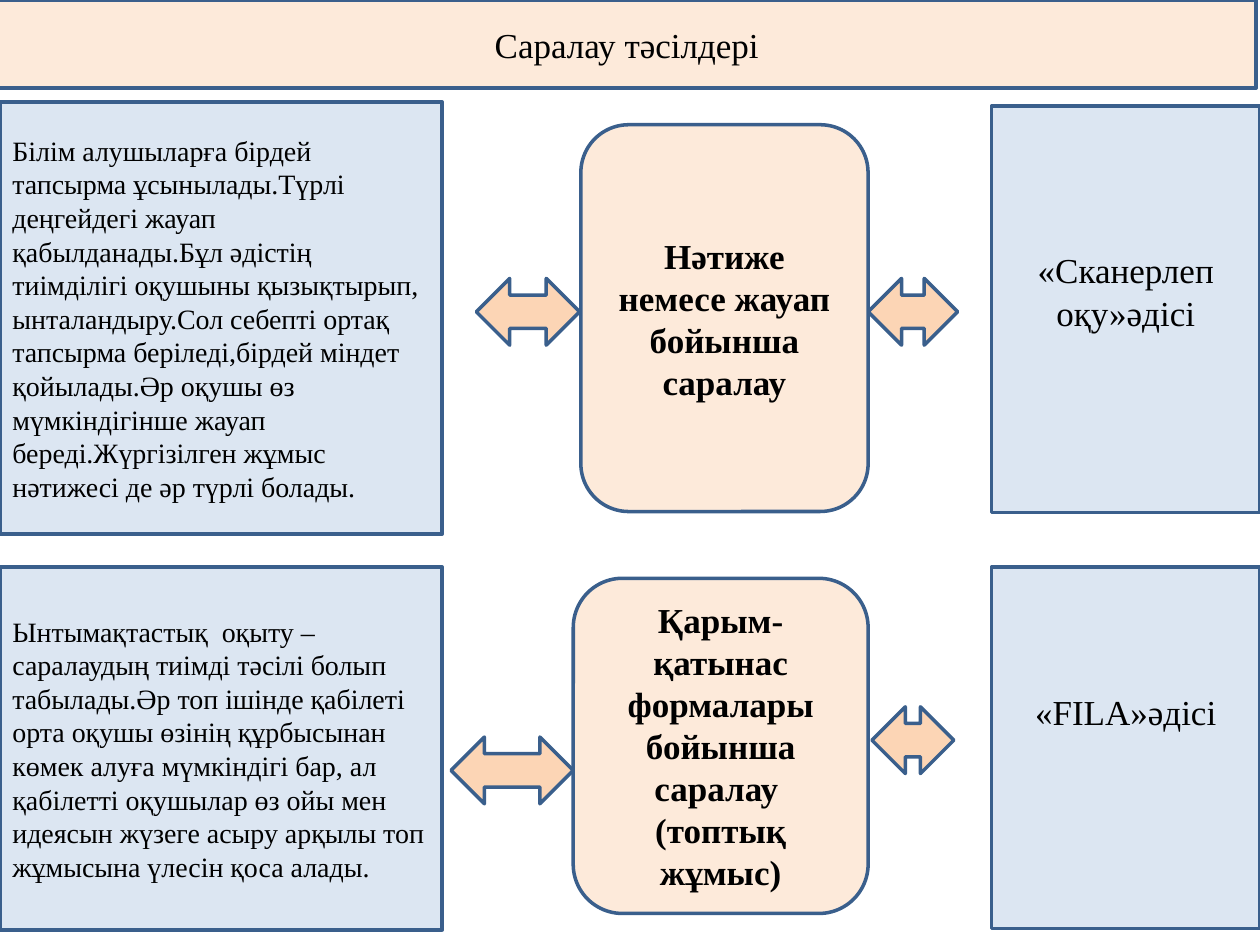
from pptx import Presentation
from pptx.dml.color import RGBColor
from pptx.enum.shapes import MSO_SHAPE
from pptx.enum.text import MSO_ANCHOR, PP_ALIGN
from pptx.util import Inches, Pt

PEACH = RGBColor(0xFD, 0xEA, 0xDA)
ORANGE = RGBColor(0xFC, 0xD5, 0xB5)
PALE_BLUE = RGBColor(0xDC, 0xE6, 0xF2)
OUTLINE = RGBColor(0x3A, 0x5F, 0x8C)
BLACK = RGBColor(0, 0, 0)
FONT = "Times New Roman"


def paint(shape, color):
    shape.fill.solid()
    shape.fill.fore_color.rgb = color
    shape.line.color.rgb = OUTLINE
    shape.line.width = Pt(2)


def write(shape, text, size, alignment=PP_ALIGN.CENTER, bold=False):
    text_frame = shape.text_frame
    text_frame.word_wrap = True
    text_frame.vertical_anchor = MSO_ANCHOR.MIDDLE
    text_frame.text = text
    paragraph = text_frame.paragraphs[0]
    paragraph.alignment = alignment
    font = paragraph.runs[0].font
    font.name = FONT
    font.size = Pt(size)
    font.bold = bold
    font.color.rgb = BLACK


presentation = Presentation()
presentation.slide_width = Inches(10)
presentation.slide_height = Inches(7.5)
slide = presentation.slides.add_slide(presentation.slide_layouts[5])

title = slide.shapes.title
title.left, title.top = Inches(-0.02), Inches(0)
title.width, title.height = Inches(9.99), Inches(0.7)
paint(title, PEACH)
write(title, "Саралау тәсілдері", 20)

descriptions = [
    (0.81, 3.43, "Білім алушыларға бірдей тапсырма ұсынылады.Түрлі деңгейдегі "
     "жауап қабылданады.Бұл әдістің тиімділігі оқушыны қызықтырып, "
     "ынталандыру.Сол себепті ортақ тапсырма беріледі,бірдей міндет "
     "қойылады.Әр оқушы өз мүмкіндігінше жауап береді.Жүргізілген жұмыс "
     "нәтижесі де әр түрлі болады."),
    (4.5, 2.88, "Ынтымақтастық  оқыту – саралаудың тиімді тәсілі болып "
     "табылады.Әр топ ішінде қабілеті орта оқушы өзінің құрбысынан көмек "
     "алуға мүмкіндігі бар, ал қабілетті оқушылар өз ойы мен идеясын жүзеге "
     "асыру арқылы топ жұмысына үлесін қоса алады."),
]
for top, height, text in descriptions:
    shape = slide.shapes.add_shape(
        MSO_SHAPE.RECTANGLE, Inches(0), Inches(top), Inches(3.51), Inches(height))
    shape.shadow.inherit = False
    paint(shape, PALE_BLUE)
    write(shape, text, 16, PP_ALIGN.LEFT)

methods = [
    (0.84, 3.23, 0.34, "«Сканерлеп оқу»әдісі"),
    (4.5, 2.87, 0.62, "«FILA»әдісі"),
]
for top, height, margin_bottom, text in methods:
    shape = slide.shapes.add_shape(
        MSO_SHAPE.RECTANGLE, Inches(7.87), Inches(top), Inches(2.13), Inches(height))
    shape.shadow.inherit = False
    paint(shape, PALE_BLUE)
    write(shape, text, 20)
    shape.text_frame.margin_bottom = Inches(margin_bottom)

arrows = [(3.78, 2.21, 0.82), (3.58, 5.85, 0.97), (6.89, 2.21, 0.71), (6.92, 5.61, 0.65)]
for left, top, width in arrows:
    shape = slide.shapes.add_shape(
        MSO_SHAPE.LEFT_RIGHT_ARROW, Inches(left), Inches(top), Inches(width), Inches(0.53))
    shape.shadow.inherit = False
    paint(shape, ORANGE)

approaches = [
    (4.61, 0.99, 2.28, 3.07, "Нәтиже немесе жауап бойынша саралау"),
    (4.55, 4.59, 2.34, 2.66, "Қарым-қатынас формалары бойынша саралау  (топтық жұмыс)"),
]
for left, top, width, height, text in approaches:
    shape = slide.shapes.add_shape(
        MSO_SHAPE.ROUNDED_RECTANGLE, Inches(left), Inches(top), Inches(width), Inches(height))
    shape.shadow.inherit = False
    paint(shape, PEACH)
    write(shape, text, 20, bold=True)

presentation.save("out.pptx")
